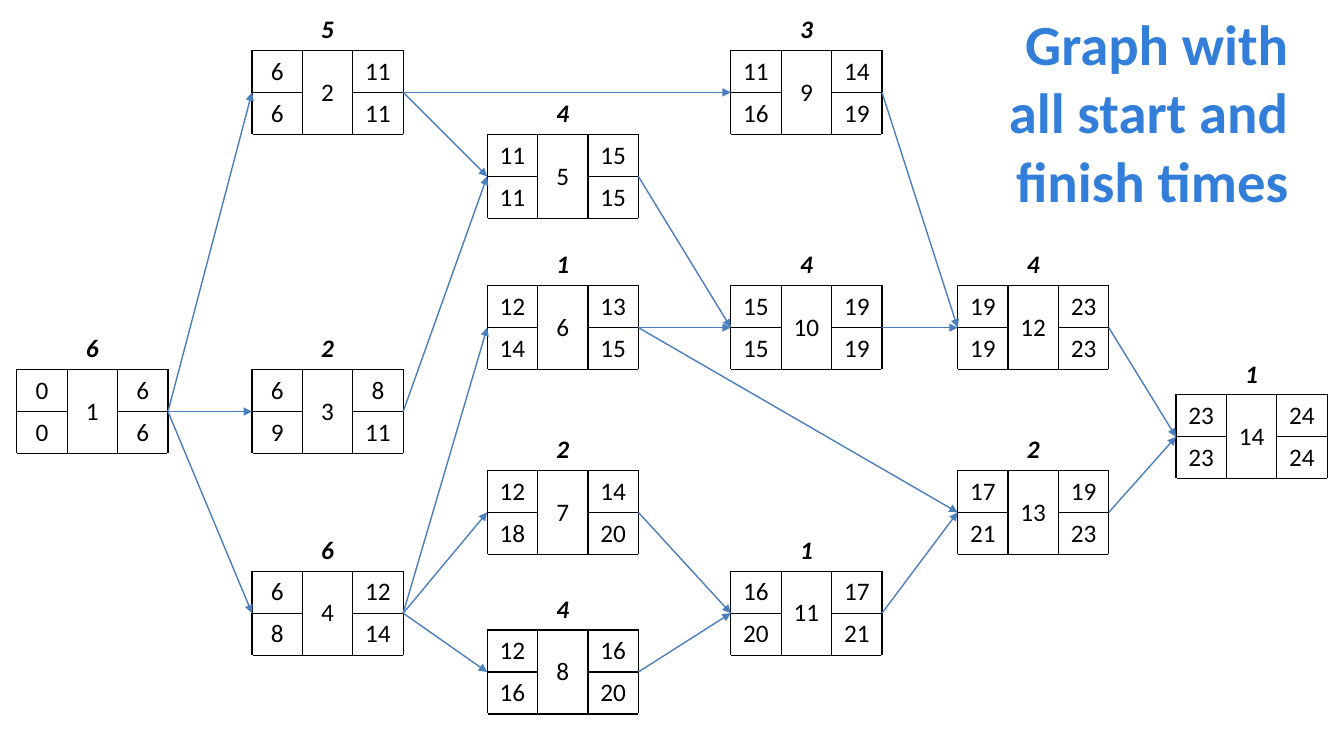
from pptx import Presentation
from pptx.dml.color import RGBColor as Rgb
from pptx.enum.shapes import MSO_CONNECTOR as Link
from pptx.enum.text import MSO_ANCHOR as Anchor, MSO_AUTO_SIZE as Fit, PP_ALIGN as Align
from pptx.oxml.ns import qn
from pptx.util import Emu, Inches, Pt
from lxml.etree import SubElement as Sub, Element

COLORS = {"ink": "000000", "paper": "FFFFFF", "title": "337ED9", "arrow": "4B7EBC"}
FONT = "Calibri"
COLS, ROWS = 160, 90            # slide grid
NODE_W, NODE_H = 18, 20         # size of a node in grid units
LEFT, RIGHT = 1, 3              # connection sites

# Each column of nodes: grid column, then
# (name, grid row, duration, early start, early finish, late start, late finish)
STAGES = [
    (140, [(14, 42, 1, 23, 24, 23, 24)]),
    (114, [(12, 29, 4, 19, 23, 19, 23), (13, 51, 2, 17, 19, 21, 23)]),
    (87, [(9, 1, 3, 11, 14, 16, 19), (10, 29, 4, 15, 19, 15, 19),
          (11, 63, 1, 16, 17, 20, 21)]),
    (58, [(5, 11, 4, 11, 15, 11, 15), (6, 29, 1, 12, 13, 14, 15),
          (7, 51, 2, 12, 14, 18, 20), (8, 70, 4, 12, 16, 16, 20)]),
    (30, [(2, 1, 5, 6, 11, 6, 11), (3, 39, 2, 6, 8, 9, 11),
          (4, 63, 6, 6, 12, 8, 14)]),
    (2, [(1, 39, 6, 0, 6, 0, 6)]),
]
EDGES = [(1, 2), (1, 4), (1, 3), (2, 9), (2, 5), (3, 5), (4, 6), (4, 7), (4, 8),
         (7, 11), (8, 11), (6, 13), (6, 10), (9, 12), (12, 14), (13, 14),
         (11, 13), (10, 12), (5, 10)]


class Board:
    def __init__(self, deck):
        self.slide = deck.slides.add_slide(deck.slide_layouts[5])
        self.unit = deck.slide_width // COLS

    def grid(self, *spans):
        return [Emu(span * self.unit) for span in spans]

    def style(self, para, size, color, align, bold=False, italic=False):
        para.alignment = align
        font = para.font
        font.name, font.size, font.bold, font.italic = FONT, Pt(size), bold, italic
        font.color.rgb = Rgb.from_string(COLORS[color])

    def title(self, text, *box):
        shape = self.slide.shapes.title
        shape.left, shape.top, shape.width, shape.height = self.grid(*box)
        frame = shape.text_frame
        frame.text = text
        frame.word_wrap, frame.auto_size = True, Fit.NONE
        frame.vertical_anchor = Anchor.MIDDLE
        frame.margin_left, frame.margin_right = Inches(0.15), Inches(0.05)
        self.style(frame.paragraphs[0], 40.5, "title", Align.RIGHT, bold=True)

    def border(self, cell, **sides):
        """Draw one-point cell borders, given as L, R, T, B colour names."""
        props = cell._tc.get_or_add_tcPr()
        for spot, side in enumerate("LRTB"):
            line = Element(qn(f"a:ln{side}"), w=str(Pt(1)))
            fill = Sub(line, qn("a:solidFill"))
            Sub(fill, qn("a:srgbClr"), val=COLORS[sides.get(side, "ink")])
            props.insert(spot, line)

    def node(self, col, row, name, length, *times):
        frame = self.slide.shapes.add_table(4, 3, *self.grid(col, row, NODE_W, NODE_H))
        table = frame.table
        table.first_row = table.horz_banding = False
        for r in range(4):
            for c in range(3):
                cell = table.cell(r, c)
                cell.vertical_anchor = Anchor.MIDDLE
                if r in (1, 2):
                    cell.fill.solid()
                    cell.fill.fore_color.rgb = Rgb.from_string(COLORS["paper"])
                    self.border(cell)
                else:
                    cell.fill.background()
                    outer = "T" if r == 0 else "B"
                    self.border(cell, **dict.fromkeys("LR" + outer, "paper"))
        for start, end in (((0, 0), (0, 2)), ((1, 1), (2, 1)), ((3, 0), (3, 2))):
            table.cell(*start).merge(table.cell(*end))
        table.cell(0, 0).vertical_anchor = Anchor.BOTTOM
        spots = [(0, 0), (1, 1), (1, 0), (1, 2), (2, 0), (2, 2)]
        for spot, value in zip(spots, (length, name, *times)):
            cell = table.cell(*spot)
            cell.text = str(value)
            head = spot == (0, 0)
            self.style(cell.text_frame.paragraphs[0], 18, "ink", Align.CENTER, head, head)
        return frame

    def arrow(self, start, end):
        link = self.slide.shapes.add_connector(Link.STRAIGHT, 0, 0, 0, 0)
        link.begin_connect(start, RIGHT)
        link.end_connect(end, LEFT)
        link.line.width = Pt(1)
        link.line.color.rgb = Rgb.from_string(COLORS["arrow"])
        props = link._element.spPr
        Sub(props.find(qn("a:ln")), qn("a:tailEnd"), type="triangle")
        Sub(props, qn("a:effectLst"))


def main():
    deck = Presentation()
    unit = Inches(1) // 12
    deck.slide_width, deck.slide_height = Emu(COLS * unit), Emu(ROWS * unit)
    board = Board(deck)
    board.title("Graph with all start and finish times", 113, 5, 41, 16.5)
    nodes = {}
    for col, stage in STAGES:
        for name, row, *values in stage:
            nodes[name] = board.node(col, row, name, *values)
    for start, end in EDGES:
        board.arrow(nodes[start], nodes[end])
    deck.save("out.pptx")


if __name__ == "__main__":
    main()
